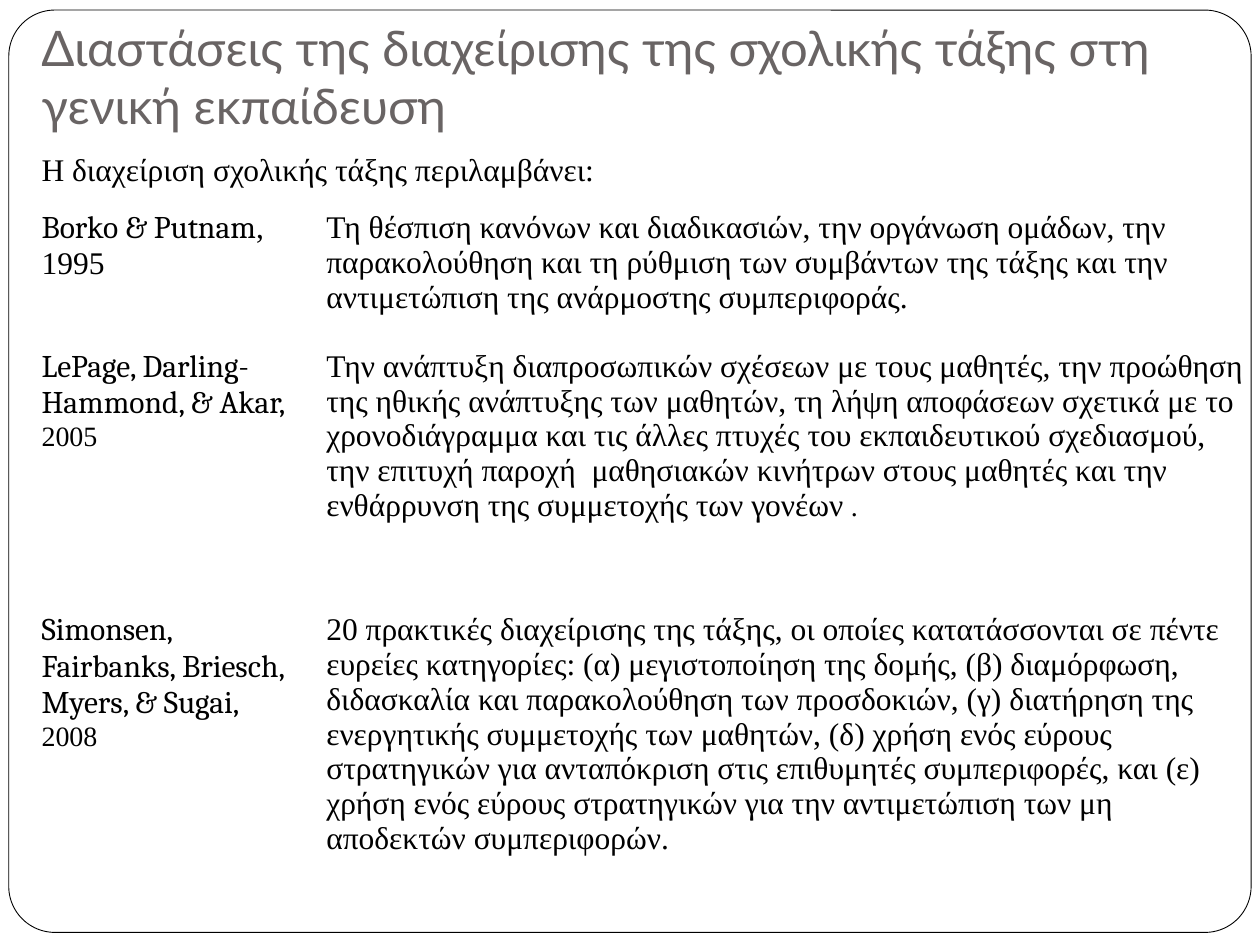
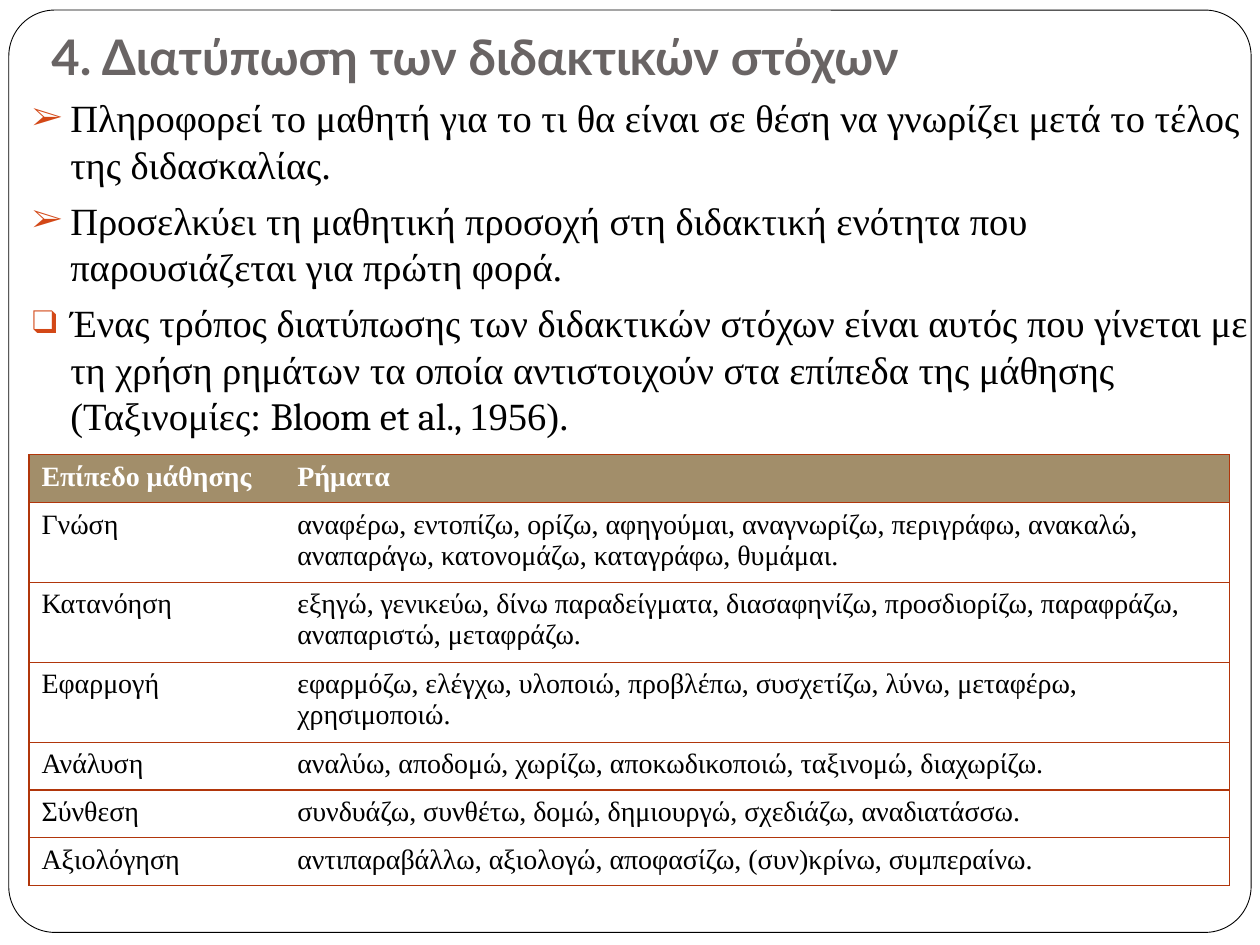
from lxml import etree
from pptx import Presentation
from pptx.dml.color import RGBColor
from pptx.enum.shapes import MSO_SHAPE
from pptx.enum.text import MSO_ANCHOR
from pptx.oxml.ns import qn
from pptx.util import Inches, Pt

ROUNDED = MSO_SHAPE.ROUNDED_RECTANGLE
TOP, BOTTOM = MSO_ANCHOR.TOP, MSO_ANCHOR.BOTTOM

BLACK, WHITE = "000000", "FFFFFF"
TITLE_GREY, BULLET_ORANGE = "696464", "D34817"
HEADER_TAN, BORDER_RUST = "A28E6A", "B1360B"
SERIF, LATIN_SERIF, TITLE_FONT = "Times New Roman", "Cambria", "Lato"

TITLE = {"name": TITLE_FONT, "size": 28, "color": TITLE_GREY}
TEXT = {"name": SERIF, "size": 18, "color": BLACK}
AUTHORS = TEXT | {"name": LATIN_SERIF}
SMALL = TEXT | {"size": 16}
HEADER = SMALL | {"color": WHITE, "bold": True}
BODY = TEXT | {"size": 22}
BODY_LATIN = BODY | {"name": LATIN_SERIF}

DEFINITIONS = [
    ([("Borko & Putnam", AUTHORS), (", 1995", TEXT)],
     [("Τη θέσπιση κανόνων και διαδικασιών, την οργάνωση ομάδων, την παρακολούθηση "
       "και τη ρύθμιση των συμβάντων της τάξης και την αντιμετώπιση της ανάρμοστης "
       "συμπεριφοράς.", TEXT)]),
    ([("LePage, Darling-Hammond, & Akar, ", AUTHORS), ("2005", SMALL)],
     [("Την ανάπτυξη διαπροσωπικών σχέσεων με τους μαθητές, την προώθηση της ηθικής "
       "ανάπτυξης των μαθητών, τη λήψη αποφάσεων σχετικά με το χρονοδιάγραμμα και τις "
       "άλλες πτυχές του εκπαιδευτικού σχεδιασμού, την επιτυχή παροχή  μαθησιακών "
       "κινήτρων στους μαθητές και την ενθάρρυνση της συμμετοχής των γονέων", TEXT),
      (" .", SMALL)]),
    ([("Simonsen, Fairbanks, Briesch, Myers, & Sugai,", AUTHORS), (" 2008", SMALL)],
     [("20 πρακτικές διαχείρισης της τάξης, οι οποίες κατατάσσονται σε πέντε ευρείες "
       "κατηγορίες: (α) μεγιστοποίηση της δομής, (β) διαμόρφωση, διδασκαλία και "
       "παρακολούθηση των προσδοκιών, (γ) διατήρηση της ενεργητικής συμμετοχής των "
       "μαθητών, (δ) χρήση ενός εύρους στρατηγικών για ανταπόκριση στις επιθυμητές "
       "συμπεριφορές, και (ε) χρήση ενός εύρους στρατηγικών για την αντιμετώπιση των "
       "μη αποδεκτών συμπεριφορών.", TEXT)]),
]

GOAL_POINTS = [
    ("➢", [("Πληροφορεί το μαθητή για το τι θα είναι σε θέση να γνωρίζει μετά το τέλος "
            "της διδασκαλίας.", BODY)]),
    ("➢", [("Προσελκύει τη μαθητική προσοχή στη διδακτική ενότητα που παρουσιάζεται "
            "για πρώτη φορά.", BODY)]),
    ("❑", [("Ένας τρόπος διατύπωσης των διδακτικών στόχων είναι αυτός που γίνεται με τη "
            "χρήση ρημάτων τα οποία αντιστοιχούν στα επίπεδα της μάθησης "
            "(Ταξινομίες: ", BODY),
           ("Bloom et al., ", BODY_LATIN), ("1956).", BODY)]),
]

LEARNING_VERBS = [
    ("Επίπεδο μάθησης", "Ρήματα"),
    ("Γνώση", "αναφέρω, εντοπίζω, ορίζω, αφηγούμαι, αναγνωρίζω, περιγράφω, ανακαλώ, "
              "αναπαράγω, κατονομάζω, καταγράφω, θυμάμαι."),
    ("Κατανόηση", "εξηγώ, γενικεύω, δίνω παραδείγματα, διασαφηνίζω, προσδιορίζω, "
                  "παραφράζω, αναπαριστώ, μεταφράζω."),
    ("Εφαρμογή", "εφαρμόζω, ελέγχω, υλοποιώ, προβλέπω, συσχετίζω, λύνω, μεταφέρω, "
                 "χρησιμοποιώ."),
    ("Ανάλυση", "αναλύω, αποδομώ, χωρίζω, αποκωδικοποιώ, ταξινομώ, διαχωρίζω."),
    ("Σύνθεση", "συνδυάζω, συνθέτω, δομώ, δημιουργώ, σχεδιάζω, αναδιατάσσω."),
    ("Αξιολόγηση", "αντιπαραβάλλω, αξιολογώ, αποφασίζω, (συν)κρίνω, συμπεραίνω."),
]


def rgb(value):
    return RGBColor.from_string(value)


def write_runs(paragraph, runs):
    for text, style in runs:
        run = paragraph.add_run()
        run.text = text
        for attribute, value in style.items():
            if attribute == "color":
                run.font.color.rgb = rgb(value)
            else:
                setattr(run.font, attribute, Pt(value) if attribute == "size" else value)


def add_text_frame(slide, box, anchor, **margins):
    frame = slide.shapes.add_textbox(*map(Inches, box)).text_frame
    frame.word_wrap = True
    frame.vertical_anchor = anchor
    for attribute, value in margins.items():
        setattr(frame, attribute, Inches(value))
    return frame


def add_framed_slide(presentation):
    slide = presentation.slides.add_slide(presentation.slide_layouts[6])
    frame = slide.shapes.add_shape(ROUNDED, *map(Inches, (0.07, 0.08, 9.86, 7.32)))
    frame.adjustments[0] = 0.05
    frame.shadow.inherit = False
    frame.fill.solid()
    frame.fill.fore_color.rgb = rgb(WHITE)
    frame.line.color.rgb = rgb(BLACK)
    frame.line.width = Pt(0.5)
    return slide


def add_title(slide, box, text, bold=False):
    frame = add_text_frame(slide, box, BOTTOM, margin_bottom=0.1)
    write_runs(frame.paragraphs[0], [(text, TITLE | {"bold": bold})])


def add_bullet(paragraph, symbol):
    properties = paragraph._p.get_or_add_pPr()
    properties.set("marL", str(Inches(0.3)))
    properties.set("indent", str(-Inches(0.3)))
    color = etree.SubElement(properties, qn("a:buClr"))
    etree.SubElement(color, qn("a:srgbClr"), val=BULLET_ORANGE)
    etree.SubElement(properties, qn("a:buSzPct"), val="85000")
    etree.SubElement(properties, qn("a:buFont"), typeface=SERIF)
    etree.SubElement(properties, qn("a:buChar"), char=symbol)


def add_bulleted_text(slide, box, points):
    frame = add_text_frame(slide, box, TOP, margin_right=0.05)
    for index, (symbol, runs) in enumerate(points):
        paragraph = frame.add_paragraph() if index else frame.paragraphs[0]
        paragraph.space_before = Pt(5.8)
        add_bullet(paragraph, symbol)
        write_runs(paragraph, runs)


def set_borders(cell, colored_sides):
    """Colour the given sides (from L, R, T, B) and hide the others."""
    properties = cell._tc.get_or_add_tcPr()
    for side in "LRTB":
        line = etree.SubElement(properties, qn(f"a:ln{side}"), w=str(Pt(0.75)))
        if side in colored_sides:
            fill = etree.SubElement(line, qn("a:solidFill"))
            etree.SubElement(fill, qn("a:srgbClr"), val=BORDER_RUST)
        else:
            etree.SubElement(line, qn("a:noFill"))


def add_plain_table(slide, left, top, widths, heights, rows, sides=("", ""), header_fill=None):
    """Add a table of cell runs; sides names the coloured borders of each column."""
    box = (left, top, sum(widths), sum(heights))
    table = slide.shapes.add_table(len(heights), len(widths), *map(Inches, box)).table
    table.first_row = table.horz_banding = False
    for column, width in zip(table.columns, widths):
        column.width = Inches(width)
    for row_index, (row, height) in enumerate(zip(rows, heights)):
        table.rows[row_index].height = Inches(height)
        for column_index, runs in enumerate(row):
            cell = table.cell(row_index, column_index)
            set_borders(cell, sides[column_index])
            if header_fill and row_index == 0:
                cell.fill.solid()
                cell.fill.fore_color.rgb = rgb(header_fill)
            else:
                cell.fill.background()
            write_runs(cell.text_frame.paragraphs[0], runs)
    return table


def build_dimensions_slide(presentation):
    slide = add_framed_slide(presentation)
    add_title(slide, (0.23, 0, 9.53, 1.17),
              "Διαστάσεις της διαχείρισης της σχολικής τάξης στη γενική εκπαίδευση")
    intro = ([("Η διαχείριση σχολικής τάξης περιλαμβάνει:", TEXT)], [])
    table = add_plain_table(slide, 0.23, 1.17, (2.26, 7.5), (0.45, 1.1, 2.09, 2.53),
                            [intro, *DEFINITIONS])
    table.cell(0, 0).merge(table.cell(0, 1))


def build_goals_slide(presentation):
    slide = add_framed_slide(presentation)
    add_title(slide, (0.31, 0.15, 9.45, 0.63), "4. Διατύπωση των διδακτικών στόχων", bold=True)
    add_bulleted_text(slide, (0.16, 0.7, 9.84, 6.56), GOAL_POINTS)
    rows = [[[(text, SMALL if index else HEADER)] for text in row]
            for index, row in enumerate(LEARNING_VERBS)]
    heights = [0.38] + [0.6] * 3 + [0.38] * 3
    add_plain_table(slide, 0.23, 3.61, (2.03, 7.5), heights, rows, ("LTB", "RTB"), HEADER_TAN)


def main():
    presentation = Presentation()
    presentation.slide_width = Inches(10)
    presentation.slide_height = Inches(7.5)
    build_dimensions_slide(presentation)
    build_goals_slide(presentation)
    presentation.save("out.pptx")


if __name__ == "__main__":
    main()
